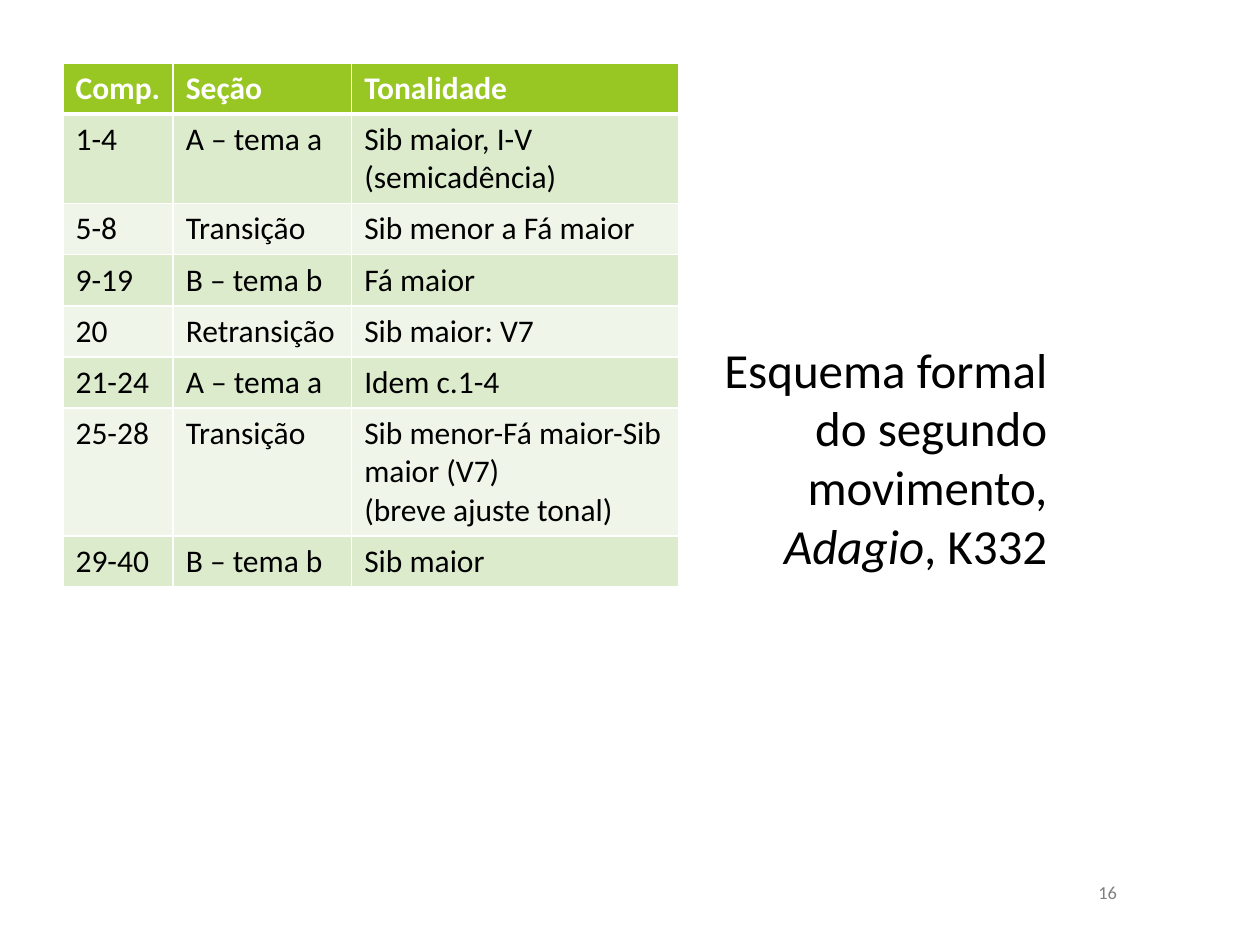
from lxml.etree import SubElement
from pptx import Presentation
from pptx.dml.color import RGBColor
from pptx.enum.text import MSO_ANCHOR, PP_ALIGN
from pptx.oxml.ns import qn
from pptx.util import Pt

WHITE = RGBColor(0xFF, 0xFF, 0xFF)
BLACK = RGBColor(0x00, 0x00, 0x00)
GRAY = RGBColor(0x80, 0x80, 0x80)
GREEN = RGBColor(0x98, 0xC7, 0x23)
BAND_DARK = RGBColor(0xDD, 0xEB, 0xCD)
BAND_LIGHT = RGBColor(0xEF, 0xF5, 0xE8)

FONT = "Calibri"
COLUMN_WIDTHS = (63, 102, 187)
ROW_HEIGHT = 29.2
FORM_SCHEME = [
    ("Comp.", "Seção", "Tonalidade"),
    ("1-4", "A – tema a", "Sib maior, I-V (semicadência)"),
    ("5-8", "Transição", "Sib menor a Fá maior"),
    ("9-19", "B – tema b", "Fá maior"),
    ("20", "Retransição", "Sib maior: V7"),
    ("21-24", "A – tema a", "Idem c.1-4"),
    ("25-28", "Transição", "Sib menor-Fá maior-Sib maior (V7)\n(breve ajuste tonal)"),
    ("29-40", "B – tema b", "Sib maior"),
]


def write_text(frame, text, size=18, color=BLACK, bold=False, italic_part="",
               align=PP_ALIGN.LEFT):
    """Write one paragraph per line, with italic_part set in italics."""
    for index, line in enumerate(text.split("\n")):
        paragraph = frame.paragraphs[0] if index == 0 else frame.add_paragraph()
        paragraph.alignment = align
        pieces = line.partition(italic_part) if italic_part else (line,)
        for piece in filter(None, pieces):
            run = paragraph.add_run()
            run.text = piece
            run.font.name = FONT
            run.font.size = Pt(size)
            run.font.color.rgb = color
            run.font.bold = bold
            run.font.italic = piece == italic_part


def set_borders(cell, bottom=1):
    properties = cell._tc.get_or_add_tcPr()
    for tag, width in (("a:lnL", 1), ("a:lnR", 1), ("a:lnT", 1), ("a:lnB", bottom)):
        line = SubElement(properties, qn(tag), w=str(Pt(width)))
        fill = SubElement(line, qn("a:solidFill"))
        SubElement(fill, qn("a:srgbClr"), val=str(WHITE))


def add_form_table(slide, left, top):
    table = slide.shapes.add_table(
        len(FORM_SCHEME), len(COLUMN_WIDTHS), Pt(left), Pt(top),
        Pt(sum(COLUMN_WIDTHS)), Pt(ROW_HEIGHT * len(FORM_SCHEME))).table
    table.horz_banding = False
    for column, width in zip(table.columns, COLUMN_WIDTHS):
        column.width = Pt(width)
    for row_index, (row, entries) in enumerate(zip(table.rows, FORM_SCHEME)):
        row.height = Pt(ROW_HEIGHT)
        header = row_index == 0
        band = GREEN if header else BAND_DARK if row_index % 2 else BAND_LIGHT
        for cell, entry in zip(row.cells, entries):
            set_borders(cell, bottom=3 if header else 1)
            cell.fill.solid()
            cell.fill.fore_color.rgb = band
            write_text(cell.text_frame, entry, bold=header,
                       color=WHITE if header else BLACK)


def add_text_box(slide, left, top, width, height, text, inset=0, **text_format):
    frame = slide.shapes.add_textbox(Pt(left), Pt(top), Pt(width), Pt(height)).text_frame
    frame.word_wrap = True
    frame.vertical_anchor = MSO_ANCHOR.MIDDLE
    frame.margin_left = frame.margin_right = Pt(inset)
    frame.margin_top = frame.margin_bottom = Pt(inset / 2)
    write_text(frame, text, **text_format)


def main():
    presentation = Presentation()
    presentation.slide_width, presentation.slide_height = Pt(720), Pt(540)
    slide = presentation.slides.add_slide(presentation.slide_layouts[6])
    add_form_table(slide, 36, 36)
    add_text_box(slide, 384, 36, 221.5, 450,
                 "Esquema formal do segundo movimento, Adagio, K332",
                 inset=7.2, size=28, italic_part="Adagio", align=PP_ALIGN.RIGHT)
    add_text_box(slide, 612, 504, 42, 12, "16", size=10.5, color=GRAY,
                 align=PP_ALIGN.CENTER)
    presentation.save("out.pptx")


if __name__ == "__main__":
    main()
